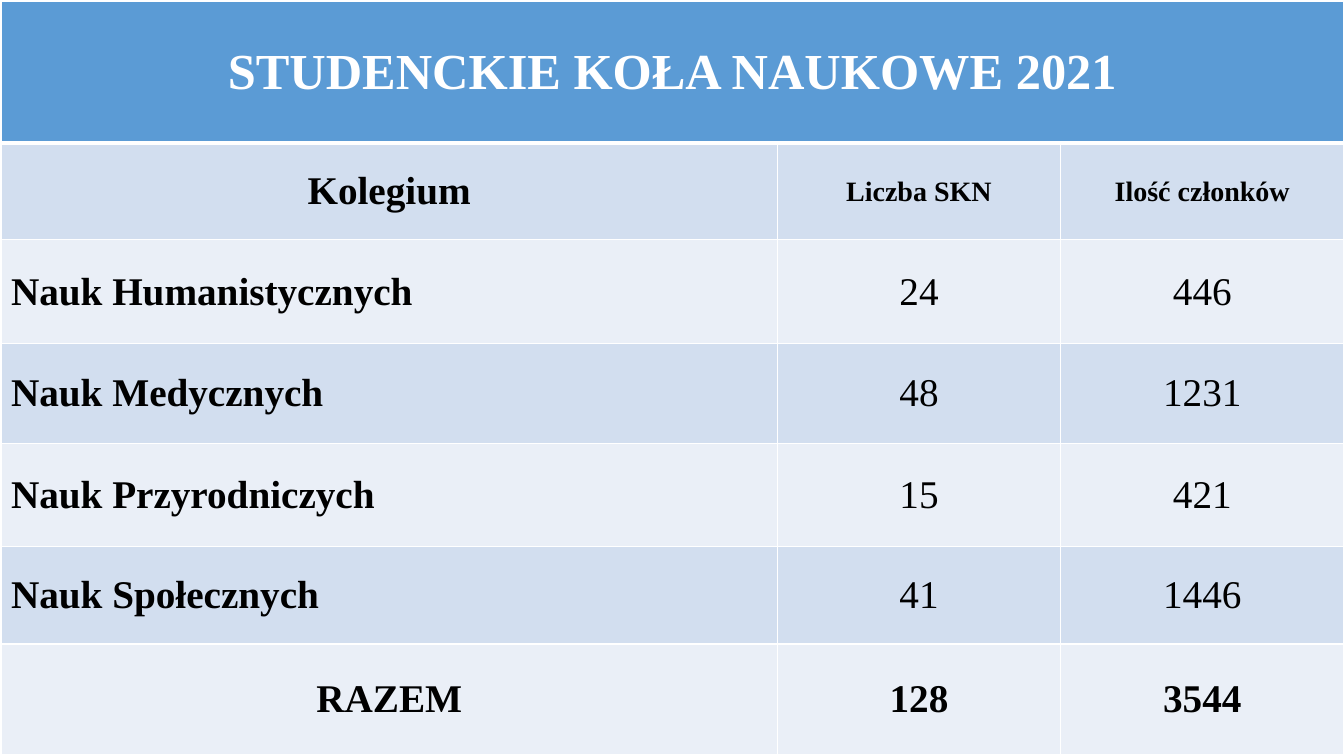
import dataclasses

import lxml.etree
import pptx
import pptx.dml.color
import pptx.enum.text
import pptx.oxml.ns
import pptx.presentation
import pptx.table
import pptx.util

WIDE, HIGH = 13.33, 7.5
EDGE = 0.01
COLS = [7.7, 2.81, 2.81]
ROWS = [1.41, 0.96, 1.03, 0.99, 1.02, 0.97, 1.1]
FONT = "Times New Roman"
HUES = {
    "head": "5B9BD5",
    "dark": "D2DEEF",
    "light": "EAEFF7",
    "white": "FFFFFF",
    "black": "000000",
}


@dataclasses.dataclass
class Entry:
    text: str
    size: int = 28
    bold: bool = True
    mid: bool = True
    hue: str = "black"


def college(name: str, clubs: int, people: int) -> list[Entry]:
    """One college: its name on the left, two plain counts."""
    counts = [Entry(str(n), bold=False) for n in (clubs, people)]
    return [Entry(name, mid=False), *counts]


GRID = [
    [Entry("STUDENCKIE KOŁA NAUKOWE 2021", 36, hue="white")],
    [Entry("Kolegium"), Entry("Liczba SKN", 20), Entry("Ilość członków", 20)],
    college("Nauk Humanistycznych", 24, 446),
    college("Nauk Medycznych", 48, 1231),
    college("Nauk Przyrodniczych", 15, 421),
    college("Nauk Społecznych", 41, 1446),
    [Entry("RAZEM"), Entry("128"), Entry("3544")],
]


def color(name: str) -> pptx.dml.color.RGBColor:
    return pptx.dml.color.RGBColor.from_string(HUES[name])


def frame(cell: pptx.table._Cell, top: int, base: int) -> None:
    """Draw white cell borders, with widths in points."""
    qn = pptx.oxml.ns.qn
    props = cell._tc.get_or_add_tcPr()
    sides = {"lnL": 1, "lnR": 1, "lnT": top, "lnB": base}
    for spot, (side, width) in enumerate(sides.items()):
        line = lxml.etree.Element(qn(f"a:{side}"), w=str(pptx.util.Pt(width)))
        fill = lxml.etree.SubElement(line, qn("a:solidFill"))
        lxml.etree.SubElement(fill, qn("a:srgbClr"), val=HUES["white"])
        props.insert(spot, line)


def write(cell: pptx.table._Cell, entry: Entry) -> None:
    cell.vertical_anchor = pptx.enum.text.MSO_ANCHOR.MIDDLE
    para = cell.text_frame.paragraphs[0]
    align = pptx.enum.text.PP_ALIGN
    para.alignment = align.CENTER if entry.mid else align.LEFT
    run = para.add_run()
    run.text = entry.text
    run.font.name = FONT
    run.font.size = pptx.util.Pt(entry.size)
    run.font.bold = entry.bold
    run.font.color.rgb = color(entry.hue)


def build(deck: pptx.presentation.Presentation) -> None:
    inch = pptx.util.Inches
    slide = deck.slides.add_slide(deck.slide_layouts[6])

    # Table grid
    box = [inch(n) for n in (EDGE, EDGE, sum(COLS), sum(ROWS))]
    table = slide.shapes.add_table(len(ROWS), len(COLS), *box).table
    for col, width in zip(table.columns, COLS):
        col.width = inch(width)
    for row, height in zip(table.rows, ROWS):
        row.height = inch(height)

    # Fills and borders
    for r in range(len(ROWS)):
        tone = "head" if r == 0 else ("light", "dark")[r % 2]
        for c in range(len(COLS)):
            cell = table.cell(r, c)
            cell.fill.solid()
            cell.fill.fore_color.rgb = color(tone)
            frame(cell, top=3 if r == 1 else 1, base=3 if r == 0 else 1)

    # Heading across all columns, then the text
    table.cell(0, 0).merge(table.cell(0, len(COLS) - 1))
    for r, line in enumerate(GRID):
        for c, entry in enumerate(line):
            write(table.cell(r, c), entry)


def main() -> None:
    deck = pptx.Presentation()
    deck.slide_width = pptx.util.Inches(WIDE)
    deck.slide_height = pptx.util.Inches(HIGH)
    build(deck)
    deck.save("out.pptx")


if __name__ == "__main__":
    main()
